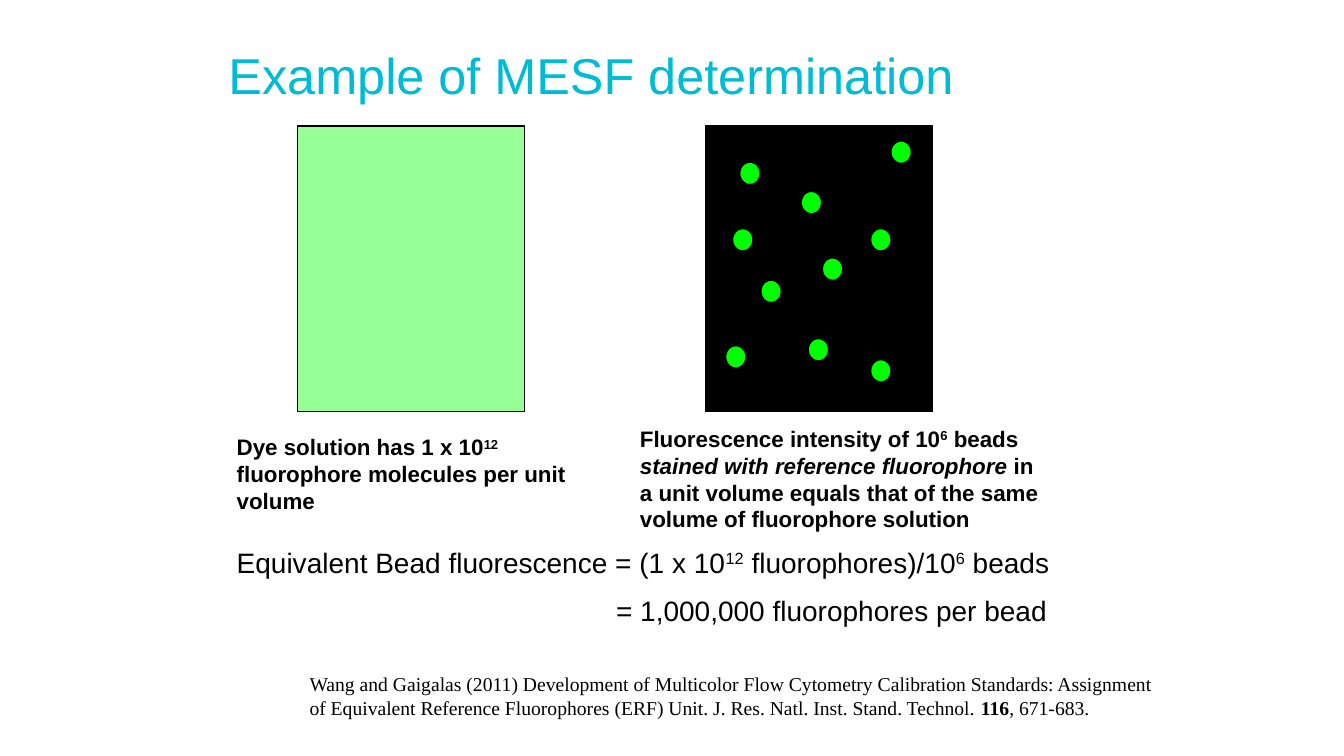
from lxml import etree
from pptx import Presentation
from pptx.dml.color import RGBColor
from pptx.enum.shapes import MSO_SHAPE
from pptx.enum.text import MSO_ANCHOR, MSO_AUTO_SIZE, PP_ALIGN
from pptx.oxml.ns import qn
from pptx.util import Pt

RECTANGLE, OVAL = MSO_SHAPE.RECTANGLE, MSO_SHAPE.OVAL
MIDDLE, LEFT = MSO_ANCHOR.MIDDLE, PP_ALIGN.LEFT
NO_FIT, GROW = MSO_AUTO_SIZE.NONE, MSO_AUTO_SIZE.SHAPE_TO_FIT_TEXT

BLACK, GREEN, TEAL = "000000", "00FF00", "00BBD4"
TITLE_ONLY = 5
VIAL_TOP, VIAL_WIDTH, VIAL_HEIGHT = 90, 162, 204
BEAD_WIDTH, BEAD_HEIGHT = 14.4, 15.8
BEADS = [(528.5, 115.9), (636.5, 100.8), (518.4, 247), (622, 163.4),
         (543.6, 200.2), (587.5, 184.3), (572.4, 136.8), (622, 257),
         (577.4, 241.9), (523.4, 163.4)]


def rgb(colour):
    return RGBColor.from_string(colour)


def add_run(paragraph, text, size, style="", font="Arial", colour=BLACK):
    """Style letters: b bold, i italic, ^ superscript."""
    run = paragraph.add_run()
    run.text = text
    run.font.name = font
    run.font.size = Pt(size)
    run.font.bold = "b" in style
    run.font.italic = "i" in style
    run.font.color.rgb = rgb(colour)
    if "^" in style:
        run._r.get_or_add_rPr().set("baseline", "30000")


def add_text(slide, left, top, width, height, paragraphs, size, font="Arial"):
    box = slide.shapes.add_textbox(Pt(left), Pt(top), Pt(width), Pt(height))
    frame = box.text_frame
    frame.word_wrap = True
    frame.auto_size = GROW
    for index, (indent, runs) in enumerate(paragraphs):
        paragraph = frame.paragraphs[0] if index == 0 else frame.add_paragraph()
        if index:
            paragraph.space_before = Pt(10.5)
        if indent:
            paragraph._p.get_or_add_pPr().set("marL", str(Pt(indent)))
        for text, style in runs:
            add_run(paragraph, text, size, style, font)


def add_filled(slide, preset, left, top, width, height, colour, opacity=100):
    shape = slide.shapes.add_shape(preset, Pt(left), Pt(top), Pt(width), Pt(height))
    shape.shadow.inherit = False
    shape.fill.solid()
    shape.fill.fore_color.rgb = rgb(colour)
    shape.line.color.rgb = rgb(BLACK)
    shape.line.width = Pt(0.75)
    if opacity < 100:
        tint = shape._element.spPr.find(qn("a:solidFill"))[0]
        etree.SubElement(tint, qn("a:alpha")).set("val", str(opacity * 1000))


def set_title(slide, text):
    title = slide.shapes.title
    title.left, title.top = Pt(156), Pt(21.6)
    title.width, title.height = Pt(648), Pt(68.4)
    frame = title.text_frame
    frame.auto_size = NO_FIT
    frame.word_wrap = True
    frame.vertical_anchor = MIDDLE
    heading = frame.paragraphs[0]
    heading.alignment = LEFT
    heading.line_spacing = 0.9
    add_run(heading, text, 36, colour=TEAL)


def main():
    deck = Presentation()
    deck.slide_width, deck.slide_height = Pt(960), Pt(540)
    slide = deck.slides.add_slide(deck.slide_layouts[TITLE_ONLY])
    set_title(slide, "Example of MESF determination")

    # Dye solution and bead suspension
    add_filled(slide, RECTANGLE, 212.4, VIAL_TOP, VIAL_WIDTH, VIAL_HEIGHT, GREEN, 41)
    add_filled(slide, RECTANGLE, 504, VIAL_TOP, VIAL_WIDTH, VIAL_HEIGHT, BLACK)
    for left, top in BEADS:
        add_filled(slide, OVAL, left, top, BEAD_WIDTH, BEAD_HEIGHT, GREEN)

    # Captions
    add_text(slide, 450, 300, 300, 85, [(0, [
        ("Fluorescence intensity of 10", "b"), ("6", "b^"), (" beads ", "b"),
        ("stained with reference fluorophore ", "bi"),
        ("in a unit volume equals that of the same volume of fluorophore solution", "b"),
    ])], 16)
    add_text(slide, 162, 306, 258, 65.5, [(0, [
        ("Dye solution has 1 x 10", "b"), ("12", "b^"),
        (" fluorophore molecules per unit volume", "b"),
    ])], 16)

    # Calculation, with the result indented to the equals sign
    add_text(slide, 162, 386, 612, 67.5, [
        (0, [("Equivalent Bead fluorescence = (1 x 10", ""), ("12", "^"),
             (" fluorophores)/10", ""), ("6", "^"), (" beads", "")]),
        (271, [("= 1,000,000 fluorophores per bead", "")]),
    ], 20)

    # Reference
    add_text(slide, 214, 476.6, 625.7, 41, [(0, [
        ("Wang and Gaigalas (2011) Development of Multicolor Flow Cytometry "
         "Calibration Standards: Assignment of Equivalent Reference Fluorophores "
         "(ERF) Unit. J. Res. Natl. Inst. Stand. Technol. ", ""),
        ("116", "b"), (", 671-683.", ""),
    ])], 14, "Times New Roman")

    deck.save("out.pptx")


if __name__ == "__main__":
    main()
